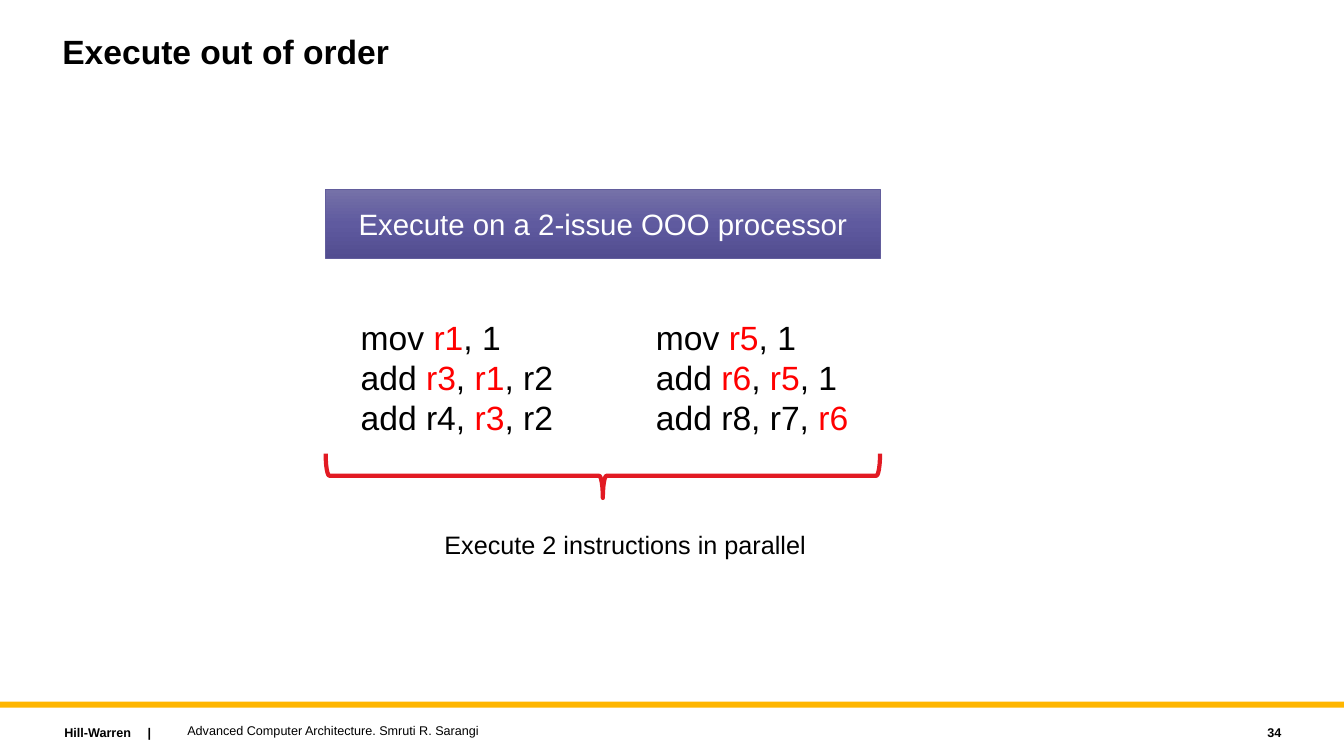
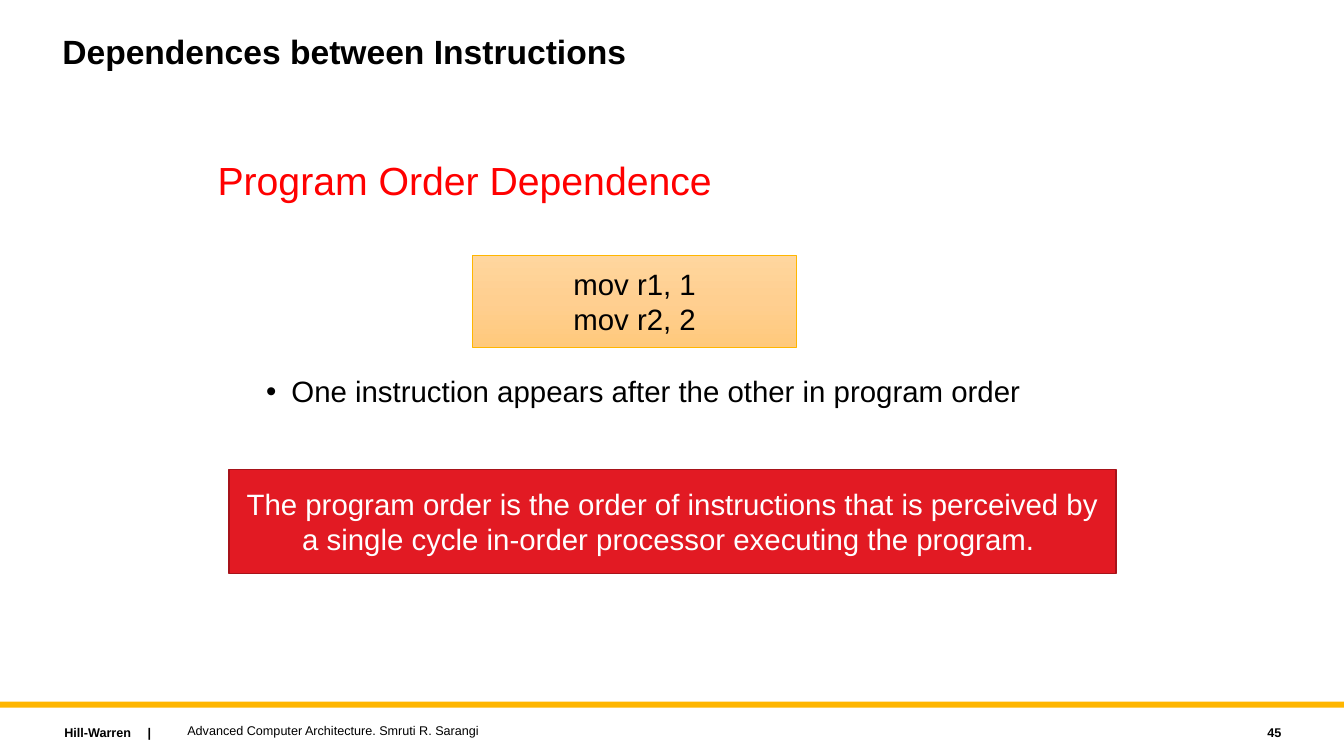
from dataclasses import dataclass

from lxml import etree
from pptx import Presentation
from pptx.dml.color import RGBColor
from pptx.enum.shapes import MSO_SHAPE
from pptx.enum.text import MSO_ANCHOR, PP_ALIGN
from pptx.oxml.ns import qn
from pptx.util import Inches, Pt

RECTANGLE, BRACE = MSO_SHAPE.RECTANGLE, MSO_SHAPE.RIGHT_BRACE
TOP, MIDDLE = MSO_ANCHOR.TOP, MSO_ANCHOR.MIDDLE
LEFT, CENTER, RIGHT = PP_ALIGN.LEFT, PP_ALIGN.CENTER, PP_ALIGN.RIGHT


@dataclass(frozen=True)
class Theme:
    font: str = "Arial"
    # Colours
    ink: str = "000000"
    paper: str = "FFFFFF"
    mark: str = "FF0000"
    gold: str = "FFB600"
    red: str = "E21A23"
    dark_red: str = "A7131A"
    violet: str = "625D9C"
    violet_blend: tuple = ("7571A8", "5F5A9F", "524D90")
    gold_blend: tuple = ("FFD69E", "FFCF90", "FFC97C")
    # Type sizes in points
    footer: int = 9
    caption: int = 18
    body: int = 21
    title: int = 24
    heading: int = 28


THEME = Theme()


class Deck:
    """Holds the theme and the current slide; boxes are percentages of the slide."""

    def __init__(self, theme):
        self.theme = theme
        self.presentation = Presentation()
        self.presentation.slide_width = Inches(13.33)
        self.presentation.slide_height = Inches(7.5)
        self.slide = None

    def across(self, share):
        return round(self.presentation.slide_width * share / 100)

    def down(self, share):
        return round(self.presentation.slide_height * share / 100)

    def place(self, box):
        left, top, width, height = box
        return self.across(left), self.down(top), self.across(width), self.down(height)

    def new_slide(self, title, number):
        self.slide = self.presentation.slides.add_slide(self.presentation.slide_layouts[6])
        size = self.theme.footer
        self.panel((0, 92.8, 100, 0.8), self.theme.gold)
        brand = self.label((4.05, 95.2, 17, 3.33), "Hill-Warren\t|", size, bold=True)
        self.tab_stop(brand, 6.2)
        self.label((13.2, 94.93, 60, 3.33), "Advanced Computer Architecture. Smruti R. Sarangi",
                   size, anchor=MIDDLE)
        self.label((85.58, 95.2, 10.5, 3.33), str(number), size, bold=True,
                   align=RIGHT, anchor=MIDDLE)
        self.label((3.9, 4, 75, 12), title, self.theme.title, bold=True, spacing=0.9)

    def set_text(self, shape, text, size, color=None, bold=False, align=LEFT,
                 anchor=TOP, spacing=None):
        """Fill a shape with lines of text; parts between asterisks are marked red."""
        frame = shape.text_frame
        frame.word_wrap = True
        frame.vertical_anchor = anchor
        for index, line in enumerate(text.split("\n")):
            paragraph = frame.add_paragraph() if index else frame.paragraphs[0]
            for name, value in {"alignment": align, "line_spacing": spacing}.items():
                setattr(paragraph, name, value)
            for position, part in enumerate(line.split("*")):
                if not part:
                    continue
                run = paragraph.add_run()
                run.text = part
                font_format = {"name": self.theme.font, "size": Pt(size), "bold": bold}
                for name, value in font_format.items():
                    setattr(run.font, name, value)
                ink = self.theme.mark if position % 2 else color or self.theme.ink
                run.font.color.rgb = RGBColor.from_string(ink)

    def label(self, box, text, size, **text_format):
        shape = self.slide.shapes.add_textbox(*self.place(box))
        self.set_text(shape, text, size, **text_format)
        return shape

    def tab_stop(self, shape, share):
        properties = shape.text_frame.paragraphs[0]._p.get_or_add_pPr()
        tabs = etree.SubElement(properties, qn("a:tabLst"))
        etree.SubElement(tabs, qn("a:tab"), pos=str(self.across(share)), algn="l")

    def bullet(self, box, text, size):
        shape = self.label(box, text, size, spacing=0.9)
        frame = shape.text_frame
        insets = {"margin_left": 0.07, "margin_top": 0.04,
                  "margin_right": 0.07, "margin_bottom": 0.04}
        for name, value in insets.items():
            setattr(frame, name, Inches(value))
        properties = frame.paragraphs[0]._p.get_or_add_pPr()
        hang = Inches(0.25)
        properties.set("marL", str(hang))
        properties.set("indent", str(-hang))
        etree.SubElement(properties, qn("a:buFont"), typeface=self.theme.font)
        etree.SubElement(properties, qn("a:buChar"), char="•")

    def panel(self, box, fill, line=None, line_width=0.5):
        """Rectangle with a plain colour, or a blend running from top to bottom."""
        shape = self.slide.shapes.add_shape(RECTANGLE, *self.place(box))
        shape.shadow.inherit = False
        if isinstance(fill, tuple):
            self.blend(shape, fill)
        else:
            shape.fill.solid()
            shape.fill.fore_color.rgb = RGBColor.from_string(fill)
        if line:
            self.outline(shape, line, line_width)
        else:
            shape.line.fill.background()
        return shape

    def blend(self, shape, colors):
        shape.fill.gradient()
        shape.fill.gradient_angle = 270
        stops = shape._element.spPr.find(".//" + qn("a:gsLst"))
        for stop in list(stops):
            stops.remove(stop)
        step = 100000 // (len(colors) - 1)
        for index, color in enumerate(colors):
            stop = etree.SubElement(stops, qn("a:gs"), pos=str(index * step))
            etree.SubElement(stop, qn("a:srgbClr"), val=color)

    def outline(self, shape, color, width):
        shape.line.color.rgb = RGBColor.from_string(color)
        shape.line.width = Pt(width)

    def label_panel(self, box, text, fill, line, color, line_width=0.5):
        shape = self.panel(box, fill, line, line_width)
        self.set_text(shape, text, self.theme.body, color=color, align=CENTER, anchor=MIDDLE)

    def brace_below(self, box):
        """Brace pointing down: a right brace turned about the centre of the box."""
        left, top, width, height = self.place(box)
        shift = (width - height) // 2
        shape = self.slide.shapes.add_shape(BRACE, left + shift, top - shift, height, width)
        shape.rotation = 90
        shape.shadow.inherit = False
        shape.fill.background()
        self.outline(shape, self.theme.red, 3)


def build_out_of_order(deck):
    deck.new_slide("Execute out of order", 34)

    # Two instruction streams side by side
    streams = ("mov *r1*, 1\nadd *r3*, *r1*, r2\nadd r4, *r3*, r2",
               "mov *r5*, 1\nadd *r6*, *r5*, 1\nadd r8, r7, *r6*")
    for column, stream in enumerate(streams):
        deck.label((26.1 + column * 21.97, 41.2, 19.7, 17.47), stream, THEME.title)

    # Header above and brace below share the same span
    left, width = 24.23, 41.25
    deck.label_panel((left, 25.07, width, 9.07), "Execute on a 2-issue OOO processor",
                     THEME.violet_blend, THEME.violet, THEME.paper)
    deck.brace_below((left, 60, width, 5.87))
    deck.label((32.33, 69.33, 30, 5.33), "Execute 2 instructions in parallel", THEME.caption)


def build_dependences(deck):
    deck.new_slide("Dependences between Instructions", 45)
    deck.label((15.45, 20, 64.65, 7.07), "Program Order Dependence", THEME.heading,
               color=THEME.mark)

    # Example and its explanation
    deck.label_panel((35.18, 33.73, 24.08, 12.27), "mov r1, 1\nmov r2, 2",
                     THEME.gold_blend, THEME.gold, THEME.ink)
    deck.bullet((19.28, 49.33, 64.65, 7.07),
                "One instruction appears after the other in program order", THEME.body)

    # Definition
    deck.label_panel((17.03, 62.13, 66, 13.73),
                     "The program order is the order of instructions that is perceived by "
                     "a single cycle in-order processor executing the program. ",
                     THEME.red, THEME.dark_red, THEME.paper, line_width=1)


def main():
    deck = Deck(THEME)
    build_out_of_order(deck)
    build_dependences(deck)
    deck.presentation.save("out.pptx")


if __name__ == "__main__":
    main()
